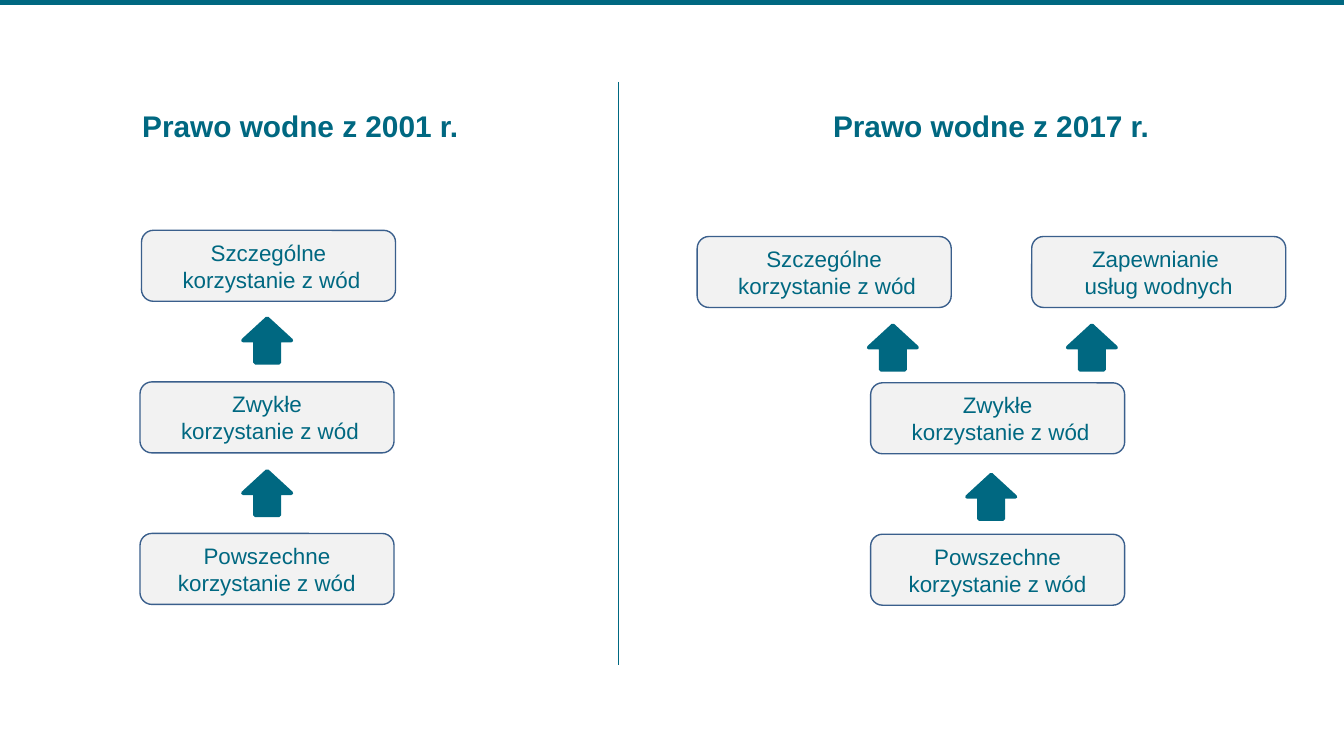
"""Build a slide comparing the water use tiers of two water laws."""
import pptx
import pptx.dml.color
import pptx.enum.shapes
import pptx.enum.text
import pptx.oxml.ns
import pptx.util
from lxml import etree

Pt = pptx.util.Pt
Shape = pptx.enum.shapes.MSO_SHAPE
Middle = pptx.enum.text.MSO_ANCHOR.MIDDLE
Center = pptx.enum.text.PP_ALIGN.CENTER


class Theme:
    teal = pptx.dml.color.RGBColor.from_string("006881")
    pale = pptx.dml.color.RGBColor.from_string("F2F2F2")
    edge = pptx.dml.color.RGBColor.from_string("3A5F8C")
    font = "Arial"
    head = 16
    body = 12


def draw(kind, left, top, width, height, fill, line, weight):
    shape = slide.shapes.add_shape(kind, Pt(left), Pt(top), Pt(width), Pt(height))
    shape.shadow.inherit = False
    shape.fill.solid()
    shape.fill.fore_color.rgb = fill
    shape.line.color.rgb = line
    shape.line.width = Pt(weight)
    return shape


def write(shape, text, size, bold):
    frame = shape.text_frame
    frame.text = text
    frame.word_wrap = True
    frame.auto_size = pptx.enum.text.MSO_AUTO_SIZE.NONE
    frame.vertical_anchor = Middle
    for para in frame.paragraphs:
        para.alignment = Center
        para.space_before = Pt(0)
        for run in para.runs:
            run.font.name = Theme.font
            run.font.size = Pt(size)
            run.font.bold = bold
            run.font.color.rgb = Theme.teal


deck = pptx.Presentation()
deck.slide_width, deck.slide_height = Pt(720), Pt(405)
slide = deck.slides.add_slide(deck.slide_layouts[4])

draw(Shape.RECTANGLE, 0, 0, 720, 1.44, Theme.teal, Theme.teal, 2)

heads = {1: ("Prawo wodne z 2001 r.", 47.5), 3: ("Prawo wodne z 2017 r.", 417.6)}
for holder in list(slide.placeholders):
    index = holder.placeholder_format.idx
    if index in heads:
        text, left = heads[index]
        holder.left, holder.top = Pt(left), Pt(54)
        holder.width, holder.height = Pt(226.8), Pt(26.6)
        write(holder, text, Theme.head, True)
    else:
        holder.element.getparent().remove(holder.element)

rule = slide.shapes.add_connector(
    pptx.enum.shapes.MSO_CONNECTOR.STRAIGHT, Pt(331.2), Pt(43.9), Pt(331.2), Pt(356.4))
rule.line.color.rgb = Theme.teal
rule.line.width = Pt(0.75)
etree.SubElement(rule.element.spPr, pptx.oxml.ns.qn("a:effectLst"))

common = "Powszechne korzystanie z wód"
plain = "Zwykłe\n korzystanie z wód"
special = "Szczególne\n korzystanie z wód"
service = "Zapewnianie \nusług wodnych"

boxes = [
    (common, 75, 285.8), (plain, 75, 204.6), (special, 75.8, 123.4),
    (common, 466.4, 286.2), (plain, 466.4, 205.1),
    (special, 373.5, 126.7), (service, 552.7, 126.7),
]
for text, left, top in boxes:
    box = draw(Shape.ROUNDED_RECTANGLE, left, top, 136.1, 38,
               Theme.pale, Theme.edge, 0.75)
    write(box, text, Theme.body, False)

arrows = [(130.2, 170.5), (130.2, 252.3), (572, 174.3), (465.4, 174.3), (518.1, 254.3)]
for left, top in arrows:
    draw(Shape.UP_ARROW, left, top, 25.9, 23.8, Theme.teal, Theme.teal, 2)

deck.save("out.pptx")
